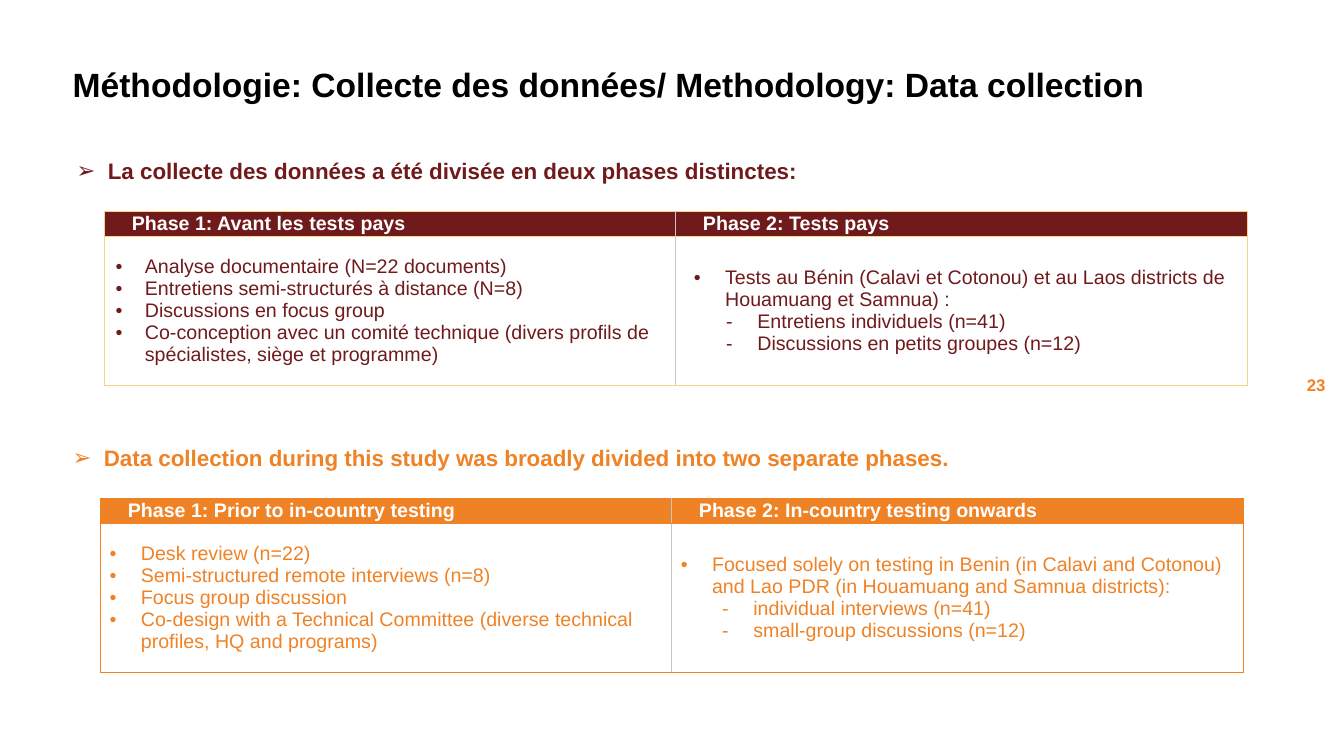
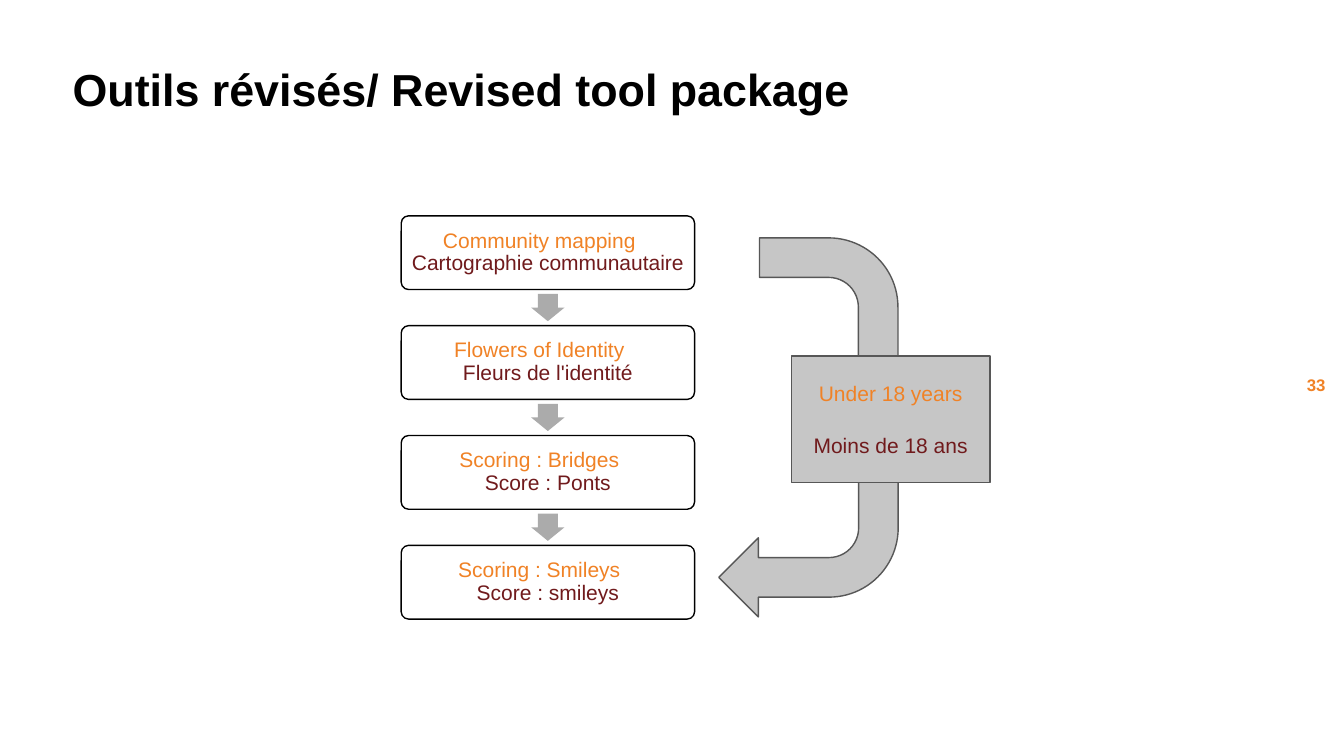
from dataclasses import dataclass
from typing import Any

from lxml.etree import SubElement
from pptx import Presentation
from pptx.dml.color import RGBColor
from pptx.enum.shapes import MSO_SHAPE as SHAPE
from pptx.enum.text import MSO_ANCHOR as ANCHOR, PP_ALIGN as ALIGN
from pptx.oxml.ns import qn
from pptx.util import Emu, Inches, Pt


# Theme: colours, type sizes and insets
@dataclass(frozen=True)
class Theme:
    font: str = "Arial"
    orange: str = "F08226"
    wine: str = "701A1C"
    gold: str = "F9D283"
    black: str = "000000"
    white: str = "FFFFFF"
    silver: str = "C6C6C6"
    gray: str = "ABABAB"
    slate: str = "575757"
    lead: int = 16
    step: int = 15
    cell: int = 14
    number: int = 12
    inset: float = 0.04


@dataclass(frozen=True)
class Box:
    """A place on a grid of 100 columns by 100 rows."""
    col: float
    row: float
    wide: float
    high: float


@dataclass(frozen=True)
class Para:
    text: str
    color: str
    size: int
    bold: bool = False
    align: Any = ALIGN.LEFT
    bullet: str = ""
    left: float = 0
    hang: float = 0
    right: float = 0
    before: float = 0
    pitch: float = 1


@dataclass(frozen=True)
class Item:
    text: str
    bullet: str = "•"
    left: float = 0.4
    hang: float = 0.31


@dataclass(frozen=True)
class Phase:
    col: float
    row: float
    lead: str
    color: str
    edge: str
    heads: tuple[str, str]
    lists: tuple[list[Item], list[Item]]


@dataclass(frozen=True)
class Bend:
    box: Box
    turn: int


THEME = Theme()
WIDTH, HEIGHT = Inches(13.33), Inches(7.5)


# Helpers
def across(cols: float) -> Emu:
    return Emu(round(WIDTH * cols / 100))


def down(rows: float) -> Emu:
    return Emu(round(HEIGHT * rows / 100))


def place(box: Box) -> tuple[Emu, Emu, Emu, Emu]:
    return across(box.col), down(box.row), across(box.wide), down(box.high)


def rgb(color: str) -> RGBColor:
    return RGBColor.from_string(color)


def apply(target: Any, values: dict[str, Any]) -> None:
    for name, value in values.items():
        setattr(target, name, value)


def write(frame: Any, paras: list[Para]) -> None:
    for index, para in enumerate(paras):
        line = frame.paragraphs[0] if index == 0 else frame.add_paragraph()
        props = line._p.get_or_add_pPr()
        margins = {"marL": para.left, "marR": para.right, "indent": -para.hang}
        for name, value in margins.items():
            props.set(name, str(Inches(value)))
        if para.bullet:
            SubElement(props, qn("a:buFont")).set("typeface", THEME.font)
            SubElement(props, qn("a:buChar")).set("char", para.bullet)
        apply(line, {"alignment": para.align, "line_spacing": para.pitch,
                     "space_before": Pt(para.before)})
        run = line.add_run()
        run.text = para.text
        apply(run.font, {"name": THEME.font, "size": Pt(para.size), "bold": para.bold})
        run.font.color.rgb = rgb(para.color)


def fit(frame: Any, anchor: Any) -> None:
    side = Inches(THEME.inset)
    apply(frame, {"word_wrap": True, "vertical_anchor": anchor, "margin_left": side,
                  "margin_right": side, "margin_top": 0, "margin_bottom": 0})


def label(slide: Any, box: Box, para: Para, anchor: Any = ANCHOR.MIDDLE) -> None:
    frame = slide.shapes.add_textbox(*place(box)).text_frame
    fit(frame, anchor)
    write(frame, [para])


def draw(slide: Any, kind: Any, box: Box, fill: str, line: str = "",
         knobs: tuple[float, ...] = (), turn: int = 0) -> Any:
    shape = slide.shapes.add_shape(kind, *place(box))
    shape.shadow.inherit = False
    shape.rotation = turn
    for index, knob in enumerate(knobs):
        shape.adjustments[index] = knob
    shape.fill.solid()
    shape.fill.fore_color.rgb = rgb(fill)
    if line:
        shape.line.color.rgb = rgb(line)
        shape.line.width = Pt(1)
    else:
        shape.line.fill.background()
    fit(shape.text_frame, ANCHOR.MIDDLE)
    return shape


def border(cell: Any, side: str, color: str, width: float) -> None:
    line = SubElement(cell._tc.get_or_add_tcPr(), qn(f"a:ln{side}"), w=str(Pt(width)))
    SubElement(SubElement(line, qn("a:solidFill")), qn("a:srgbClr"), val=color)


# Title and page number shared by the slides
def page(deck: Any, title: str, size: int, number: int) -> Any:
    slide = deck.slides.add_slide(deck.slide_layouts[6])
    high = size / 4.5
    middle = 8.4 + size / 9 if size < 32 else 11.73
    label(slide, Box(5.1, middle - high / 2, 92.1, high),
          Para(title, THEME.black, size, True))
    label(slide, Box(96.08, 49.6, 2.85, 2.67),
          Para(str(number), THEME.orange, THEME.number, True, ALIGN.RIGHT))
    return slide


# Lead sentence with a two-column table below
def phase(slide: Any, part: Phase) -> None:
    label(slide, Box(part.col, part.row, 86.25, 7.2),
          Para(part.lead, part.color, THEME.lead, True, bullet="➢", left=0.31, hang=0.31),
          ANCHOR.TOP)
    box = Box(part.col + 2.38, part.row + 7.1, 85, 23.07)
    table = slide.shapes.add_table(2, 2, *place(box)).table
    apply(table, {"first_row": False, "horz_banding": False})
    for row, high in zip(table.rows, (3.33, 19.74)):
        row.height = down(high)
    for index, column in enumerate(table.columns):
        column.width = across(box.wide / 2)
        head, body = table.cell(0, index), table.cell(1, index)
        for cell in (head, body):
            apply(cell, {"vertical_anchor": ANCHOR.MIDDLE, "margin_left": 0,
                         "margin_right": 0, "margin_top": 0, "margin_bottom": 0})
            inner = "R" if index == 0 else "L"
            for side in "LRTB":
                look = (THEME.silver, 1) if side == inner else (part.edge, 0.5)
                border(cell, side, *look)
        head.fill.solid()
        head.fill.fore_color.rgb = rgb(part.color)
        body.fill.background()
        write(head.text_frame, [Para(part.heads[index], THEME.white, THEME.cell, True,
                                     left=0.27)])
        write(body.text_frame, [Para(item.text, part.color, THEME.cell, bullet=item.bullet,
                                     left=item.left, hang=item.hang)
                                for item in part.lists[index]])


# Content
PHASES = [
    Phase(5.4, 20.8, "La collecte des données a été divisée en deux phases distinctes:",
          THEME.wine, THEME.gold,
          ("Phase 1: Avant les tests pays", "Phase 2: Tests pays"),
          ([Item(text, hang=0.29) for text in (
              "Analyse documentaire (N=22 documents)",
              "Entretiens semi-structurés à distance (N=8)",
              "Discussions en focus group",
              "Co-conception avec un comité technique (divers profils de spécialistes, "
              "siège et programme)")],
           [Item("Tests au Bénin (Calavi et Cotonou) et au Laos districts de "
                 "Houamuang et Samnua) :", left=0.49),
            Item("Entretiens individuels (n=41)", "-", 0.81),
            Item("Discussions en petits groupes (n=12)", "-", 0.81)])),
    Phase(5.1, 58.8, "Data collection during this study was broadly divided into two "
          "separate phases.", THEME.orange, THEME.orange,
          ("Phase 1: Prior to in-country testing", "Phase 2: In-country testing onwards"),
          ([Item(text) for text in (
              "Desk review (n=22)",
              "Semi-structured remote interviews (n=8)",
              "Focus group discussion",
              "Co-design with a Technical Committee (diverse technical profiles, "
              "HQ and programs)")],
           [Item("Focused solely on testing in Benin (in Calavi and Cotonou) and Lao PDR "
                 "(in Houamuang and Samnua districts):"),
            Item("individual interviews (n=41)", "-", 0.81),
            Item("small-group discussions (n=12)", "-", 0.81)])),
]
STEPS = [
    ("Community mapping", "Cartographie communautaire"),
    ("Flowers of Identity", "Fleurs de l'identité"),
    ("Scoring : Bridges", "Score : Ponts"),
    ("Scoring : Smileys", "Score : smileys"),
]
BENDS = [Bend(Box(55.72, 32.87, 13.35, 20.93), 90),
         Bend(Box(53.48, 60.67, 13.35, 20.93), 180)]


def pair(english: str, french: str, gap: float, pitch: float, right: float) -> list[Para]:
    return [Para(english, THEME.orange, THEME.step, align=ALIGN.CENTER,
                 right=right, pitch=pitch),
            Para(french, THEME.wine, THEME.step, align=ALIGN.CENTER,
                 before=gap, pitch=pitch)]


# Column of steps with arrows between, and the bypass on its right
def flow(slide: Any) -> None:
    first, pitch = Box(29.85, 28.55, 21.83, 9.75), 14.53
    wide, high = 2.48, 3.6
    for index, words in enumerate(STEPS):
        top = first.row + index * pitch
        step = draw(slide, SHAPE.ROUNDED_RECTANGLE,
                    Box(first.col, top, first.wide, first.high),
                    THEME.white, THEME.black, (0.1,))
        write(step.text_frame, pair(*words, gap=0, pitch=0.9, right=0.17))
        if index < len(STEPS) - 1:
            gap = pitch - first.high
            draw(slide, SHAPE.DOWN_ARROW,
                 Box(first.col + (first.wide - wide) / 2,
                     top + first.high + (gap - high) / 2, wide, high),
                 THEME.gray, knobs=(0.6, 0.5))
    for bend in BENDS:
        draw(slide, SHAPE.BENT_ARROW, bend.box, THEME.silver, THEME.slate, turn=bend.turn)
    note = draw(slide, SHAPE.RECTANGLE, Box(58.88, 47.07, 14.78, 16.8),
                THEME.silver, THEME.slate)
    write(note.text_frame, pair("Under 18 years", "Moins de 18 ans", 19, 1, 0))


def main() -> None:
    deck = Presentation()
    apply(deck, {"slide_width": WIDTH, "slide_height": HEIGHT})
    slide = page(deck, "Méthodologie: Collecte des données/ Methodology: Data collection",
                 24, 23)
    for part in PHASES:
        phase(slide, part)
    flow(page(deck, "Outils révisés/ Revised tool package", 32, 33))
    deck.save("out.pptx")


if __name__ == "__main__":
    main()
